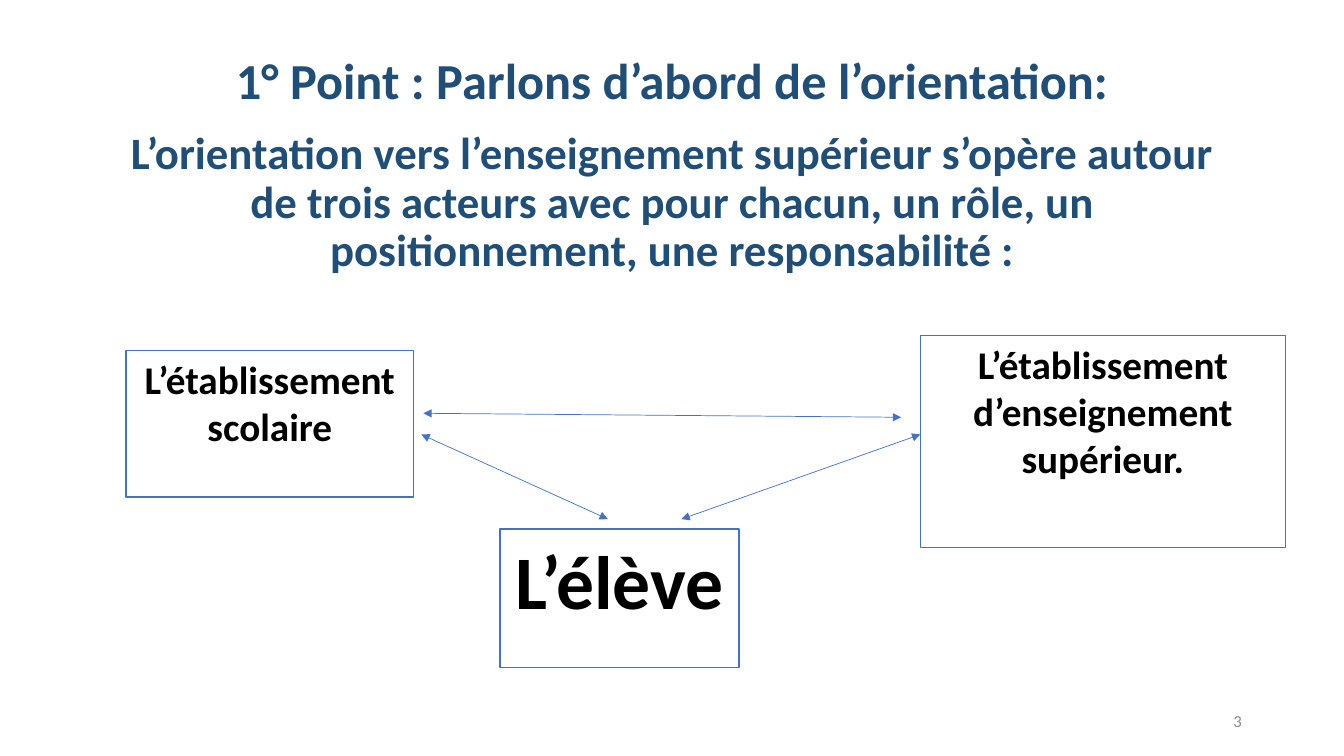
from lxml.etree import SubElement
from pptx import Presentation
from pptx.dml.color import RGBColor
from pptx.enum.shapes import MSO_CONNECTOR, MSO_SHAPE
from pptx.enum.text import MSO_ANCHOR, PP_ALIGN
from pptx.oxml.ns import qn
from pptx.util import Inches, Pt

COLORS = {
    "heading": "1F4E79",
    "text": "000000",
    "muted": "8C8C8C",
    "line": "4472C4",
    "paper": "FFFFFF",
}


class ActorSlide:
    font = "Calibri"

    def __init__(self, deck):
        self.width = deck.slide_width
        self.height = deck.slide_height
        self.page = deck.slides.add_slide(deck.slide_layouts[5])

    def color(self, name):
        return RGBColor.from_string(COLORS[name])

    def point(self, across, down):
        return round(self.width * across / 100), round(self.height * down / 100)

    def area(self, left, top, width, height):
        return *self.point(left, top), *self.point(width, height)

    def add_text(self, box, text, size, color, bold=True, align=PP_ALIGN.CENTER,
                 anchor=MSO_ANCHOR.TOP, spacing=1.0):
        frame = box.text_frame
        frame.word_wrap = True
        frame.vertical_anchor = anchor
        para = frame.paragraphs[0]
        para.alignment = align
        para.line_spacing = spacing
        span = para.add_run()
        span.text = text
        span.font.name = self.font
        span.font.size = Pt(size)
        span.font.bold = bold
        span.font.color.rgb = self.color(color)

    def title(self, text, area):
        box = self.page.shapes.title
        box.left, box.top, box.width, box.height = self.area(*area)
        self.add_text(box, text, 36, "heading", anchor=MSO_ANCHOR.MIDDLE, spacing=0.9)

    def label(self, text, area, size, color, **style):
        box = self.page.shapes.add_textbox(*self.area(*area))
        self.add_text(box, text, size, color, **style)

    def actor(self, text, area, size):
        box = self.page.shapes.add_shape(MSO_SHAPE.RECTANGLE, *self.area(*area))
        box.shadow.inherit = False
        box.fill.solid()
        box.fill.fore_color.rgb = self.color("paper")
        box.line.color.rgb = self.color("line")
        box.line.width = Pt(1)
        self.add_text(box, text, size, "text")

    def double_arrow(self, start, end):
        arrow = self.page.shapes.add_connector(
            MSO_CONNECTOR.STRAIGHT, *self.point(*start), *self.point(*end))
        arrow.line.color.rgb = self.color("line")
        arrow.line.width = Pt(0.5)
        properties = arrow._element.spPr
        outline = properties.find(qn("a:ln"))
        for tip in ("a:headEnd", "a:tailEnd"):
            SubElement(outline, qn(tip), type="triangle")
        SubElement(properties, qn("a:effectLst"))


def main():
    deck = Presentation()
    deck.slide_width, deck.slide_height = Inches(13.33), Inches(7.5)
    slide = ActorSlide(deck)

    slide.title("1° Point : Parlons d’abord de l’orientation:", (6.9, 5.33, 86.25, 11.33))
    slide.label(
        "L’orientation vers l’enseignement supérieur s’opère autour de trois acteurs "
        "avec pour chacun, un rôle, un positionnement, une responsabilité :",
        (6.9, 16.67, 86.25, 76.13), 32, "heading", spacing=0.9)
    slide.label("3", (70.65, 92.67, 22.5, 5.33), 12, "muted", bold=False,
                align=PP_ALIGN.RIGHT, anchor=MSO_ANCHOR.MIDDLE)

    for text, area, size in (
        ("L’élève", (37.2, 70, 17.78, 18.27), 54),
        ("L’établissement scolaire", (9.38, 46.4, 21.38, 19.33), 28),
        ("L’établissement d’enseignement supérieur.", (68.48, 44.4, 27.15, 28), 28),
    ):
        slide.actor(text, area, size)

    for start, end in (
        ((31.5, 54.67), (67.05, 55.2)),
        ((50.7, 68.67), (68.48, 57.47)),
        ((31.35, 57.47), (45.23, 68.67)),
    ):
        slide.double_arrow(start, end)

    deck.save("out.pptx")


if __name__ == "__main__":
    main()
